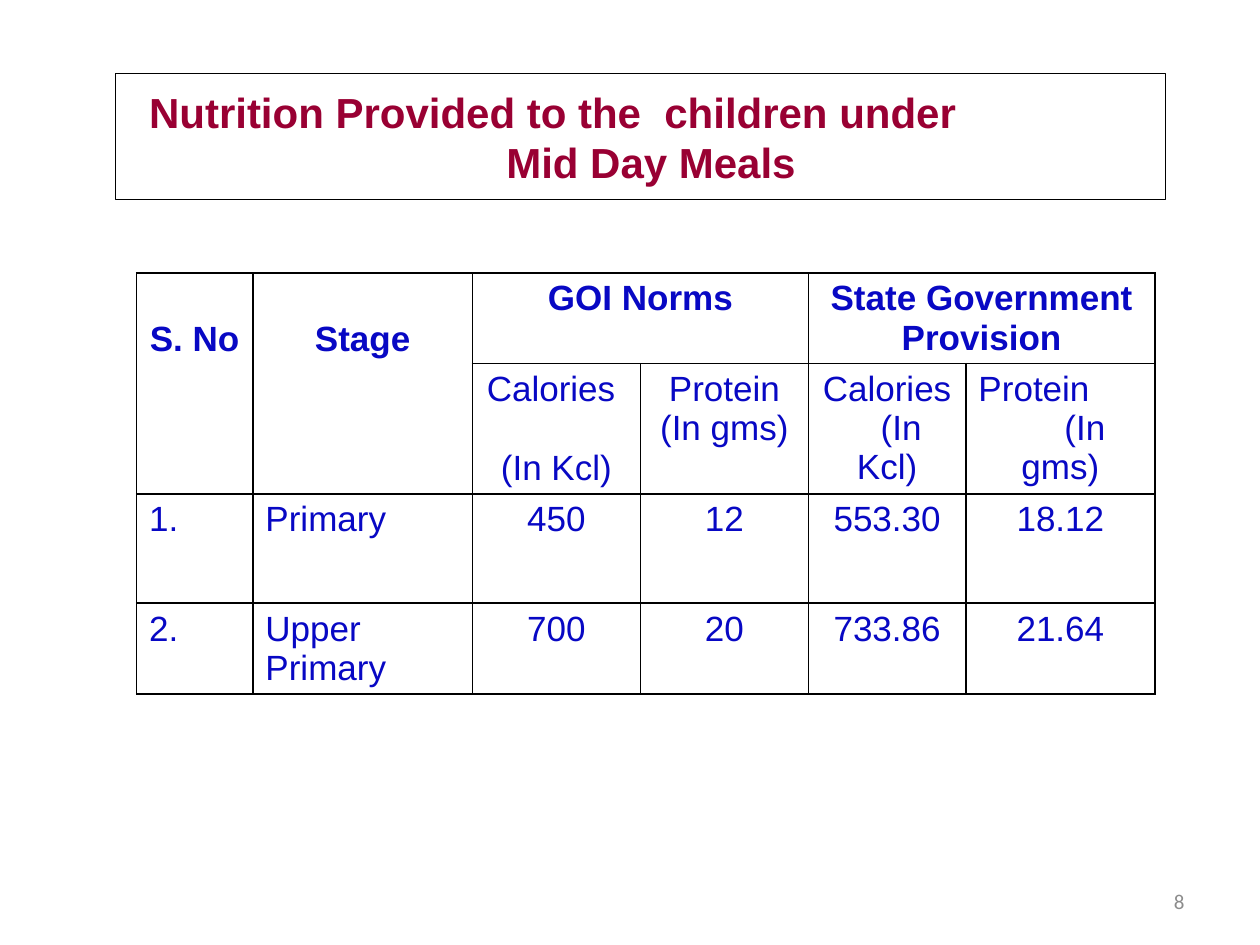
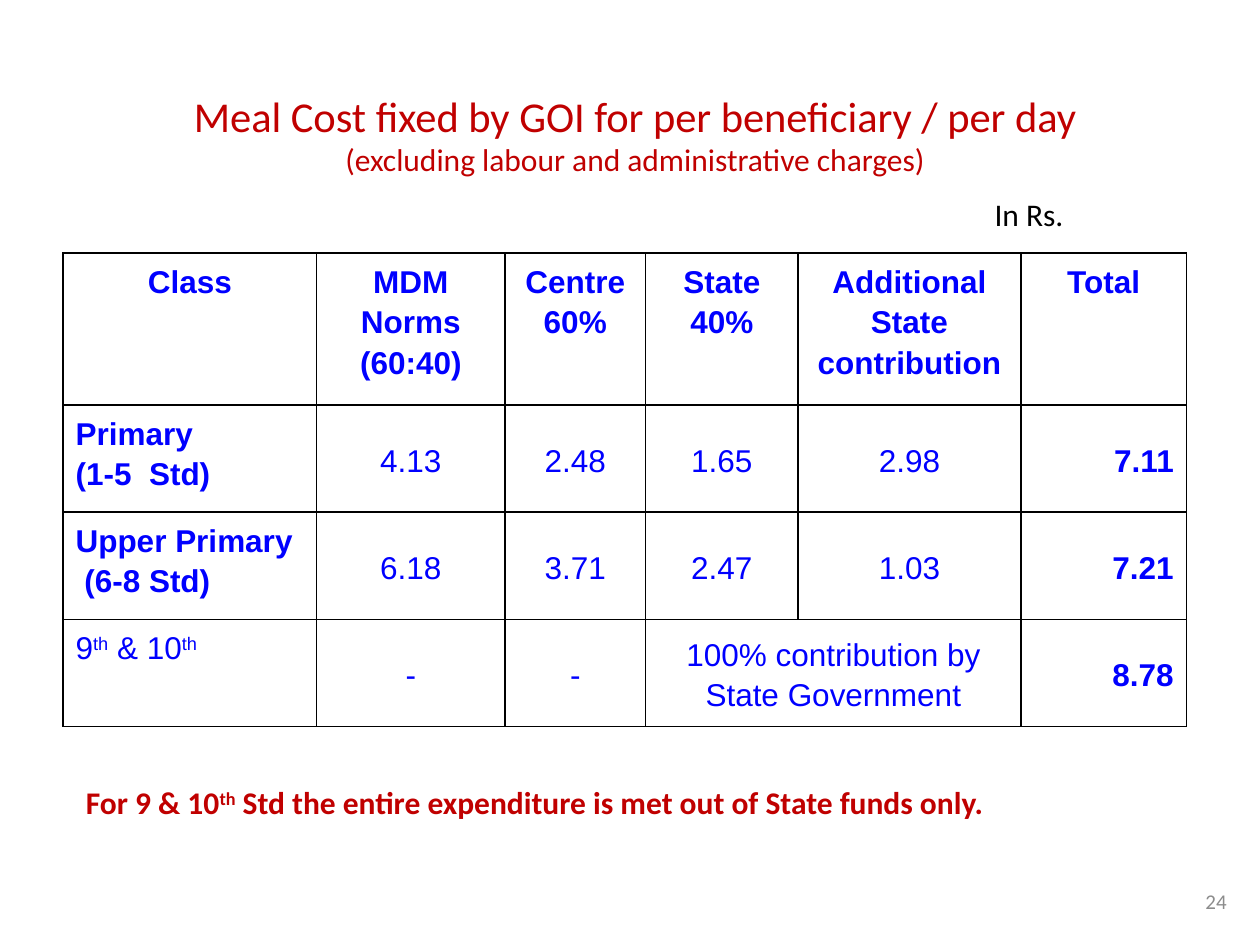
from dataclasses import dataclass
from itertools import product

from lxml.etree import SubElement
from pptx import Presentation
from pptx.dml.color import RGBColor
from pptx.enum.text import MSO_ANCHOR as Anchor, MSO_AUTO_SIZE as AutoSize, PP_ALIGN as Align
from pptx.oxml.ns import qn
from pptx.util import Pt

BLACK = RGBColor(0x00, 0x00, 0x00)
GREY = RGBColor(0x8C, 0x8C, 0x8C)
MAROON = RGBColor(0x99, 0x00, 0x33)
RED = RGBColor(0xC0, 0x00, 0x00)
NAVY = RGBColor(0x08, 0x08, 0xC4)
BLUE = RGBColor(0x00, 0x00, 0xFF)
SUPERSCRIPT_MARK = "^"
TITLE_ONLY = 5


@dataclass
class Box:
    left: float
    top: float
    width: float
    height: float

    def lengths(self):
        return Pt(self.left), Pt(self.top), Pt(self.width), Pt(self.height)


@dataclass
class Style:
    font: str
    size: float
    color: RGBColor
    bold: bool = False
    spacing: float = 1.0


@dataclass
class Line:
    text: str
    align: Align = Align.CENTER
    indent: float = 0
    after: float = 0


@dataclass
class Entry:
    lines: list
    bold: bool = False
    anchor: Anchor = Anchor.TOP
    top_margin: float = 3.6
    across: int = 1
    down: int = 1


def entry(*texts, align=Align.CENTER, **options):
    return Entry([Line(text, align) for text in texts], **options)


def add_span(para, text, style, bold=None, raised=False):
    span = para.add_run()
    span.text = text
    font = span.font
    font.name, font.size = style.font, Pt(style.size)
    font.bold = style.bold if bold is None else bold
    font.color.rgb = style.color
    if raised:
        font._element.set("baseline", "30000")


def write_lines(frame, lines, style, bold=None):
    for index, line in enumerate(lines):
        para = frame.add_paragraph() if index else frame.paragraphs[0]
        para.alignment = line.align
        para.line_spacing = style.spacing
        para.space_before, para.space_after = Pt(0), Pt(line.after)
        if line.indent:
            properties = para._p.get_or_add_pPr()
            properties.set("marL", str(Pt(line.indent)))
            properties.set("indent", "0")
        for part, text in enumerate(line.text.split(SUPERSCRIPT_MARK)):
            if text:
                add_span(para, text, style, bold, raised=part % 2 == 1)


def add_text(page, box, line, style, anchor=Anchor.MIDDLE):
    shape = page.shapes.add_textbox(*box.lengths())
    frame = shape.text_frame
    frame.word_wrap = True
    frame.vertical_anchor = anchor
    write_lines(frame, [line], style)


def place_title(page, box):
    title = page.shapes.title
    title.left, title.top, title.width, title.height = box.lengths()
    frame = title.text_frame
    frame.word_wrap = True
    frame.auto_size = AutoSize.NONE
    frame.vertical_anchor = Anchor.MIDDLE
    return title


def add_page_number(page, box, number):
    add_text(page, box, Line(number, Align.RIGHT), Style("Calibri", 12, GREY))


def outline_cell(cell):
    properties = cell._tc.get_or_add_tcPr()
    for side in ("a:lnL", "a:lnR", "a:lnT", "a:lnB"):
        border = SubElement(properties, qn(side), w=str(Pt(1)))
        fill = SubElement(border, qn("a:solidFill"))
        SubElement(fill, qn("a:srgbClr"), val=str(BLACK))
    cell.fill.background()


def add_grid(page, box, widths, heights, rows, style):
    table = page.shapes.add_table(len(heights), len(widths), *box.lengths()).table
    table.first_row = table.horz_banding = False
    for column, width in zip(table.columns, widths):
        column.width = Pt(width)
    for row, height in zip(table.rows, heights):
        row.height = Pt(height)
    for r, c in product(range(len(heights)), range(len(widths))):
        cell = table.cell(r, c)
        outline_cell(cell)
        item = rows[r][c]
        if item is None:
            continue
        if item.across > 1 or item.down > 1:
            cell.merge(table.cell(r + item.down - 1, c + item.across - 1))
        cell.vertical_anchor = item.anchor
        cell.margin_top = Pt(item.top_margin)
        write_lines(cell.text_frame, item.lines, style, item.bold)


def add_nutrition_table(page, box):
    def stage_row(number, stage, *values):
        labels = [entry(text, align=Align.LEFT) for text in (number, stage)]
        return labels + [entry(value) for value in values]

    rows = [
        [
            entry("S. No", bold=True, top_margin=26.5, down=2),
            entry("Stage", bold=True, top_margin=26.5, down=2),
            entry("GOI Norms", bold=True, across=2),
            None,
            entry("State Government Provision", bold=True, across=2),
            None,
        ],
        [
            None,
            None,
            Entry([Line("Calories", Align.LEFT, 1, after=22.5), Line("(In Kcl)")]),
            entry("Protein (In gms)"),
            Entry([Line("Calories"), Line("(In", indent=16), Line("Kcl)")]),
            Entry([Line("Protein", Align.LEFT), Line("(In", indent=28), Line("gms)")]),
        ],
        stage_row("1.", "Primary", "450", "12", "553.30", "18.12"),
        stage_row("2.", "Upper Primary", "700", "20", "733.86", "21.64"),
    ]
    widths = [66.5, 125.5, 96, 96, 90, 108]
    heights = [51.5, 74, 62.5, 52]
    add_grid(page, box, widths, heights, rows, Style("Arial", 20, NAVY))


def add_cost_table(page, box):
    def value(text, **options):
        return entry(text, anchor=Anchor.MIDDLE, **options)

    def total(text):
        return value(text, align=Align.RIGHT, bold=True)

    def class_row(name, standards, *amounts, sum_up):
        label = entry(name, standards, align=Align.LEFT, bold=True)
        return [label, *map(value, amounts), total(sum_up)]

    headings = ["Class", "MDM Norms (60:40)", "Centre 60%", "State 40%",
                "Additional State contribution", "Total"]
    rows = [
        [entry(heading, bold=True) for heading in headings],
        class_row("Primary", "(1-5  Std)", "4.13", "2.48", "1.65", "2.98", sum_up="7.11"),
        class_row("Upper Primary", " (6-8 Std)", "6.18", "3.71", "2.47", "1.03", sum_up="7.21"),
        [
            entry("9^th^ & 10^th^", align=Align.LEFT),
            value("-"),
            value("-"),
            value("100% contribution by State Government", across=2),
            None,
            total("8.78"),
        ],
    ]
    widths = [145, 107.5, 80.5, 87, 127.5, 94.5]
    heights = [87] + [61.2] * 3
    add_grid(page, box, widths, heights, rows, Style("Arial", 18, BLUE, spacing=1.15))


def build_nutrition_page(page):
    title = place_title(page, Box(66, 42, 600, 72))
    title.line.color.rgb = BLACK
    title.line.width = Pt(0.75)
    lines = [
        Line("Nutrition Provided to the  children under", Align.LEFT, indent=12),
        Line("Mid Day Meals"),
    ]
    write_lines(title.text_frame, lines, Style("Arial", 24, MAROON, bold=True))
    add_nutrition_table(page, Box(78, 156, 582, 240))
    add_page_number(page, Box(516, 500.5, 168, 28.8), "8")


def build_cost_page(page):
    frame = place_title(page, Box(66, 54, 594, 45)).text_frame
    heading = Style("Calibri", 24.3, RED)
    write_lines(frame, [Line("Meal Cost fixed by GOI for per beneficiary / per day")], heading)
    para = frame.paragraphs[0]
    para.add_line_break()
    add_span(para, "(excluding labour and administrative charges)", Style("Calibri", 18, RED))

    add_cost_table(page, Box(36, 144.5, 642, 270.6))
    note = Line("For 9 & 10^th^ Std the entire expenditure is met out of State funds only.", Align.LEFT)
    add_text(page, Box(42, 444, 618, 29), note, Style("Calibri", 18, RED, bold=True))
    add_page_number(page, Box(540, 500.5, 168, 28.8), "24")
    add_text(page, Box(522, 108, 132, 29), Line("In Rs."), Style("Calibri", 18, BLACK), Anchor.TOP)


def main():
    deck = Presentation()
    deck.slide_width, deck.slide_height = Pt(720), Pt(540)
    for build in (build_nutrition_page, build_cost_page):
        build(deck.slides.add_slide(deck.slide_layouts[TITLE_ONLY]))
    deck.save("out.pptx")


if __name__ == "__main__":
    main()
